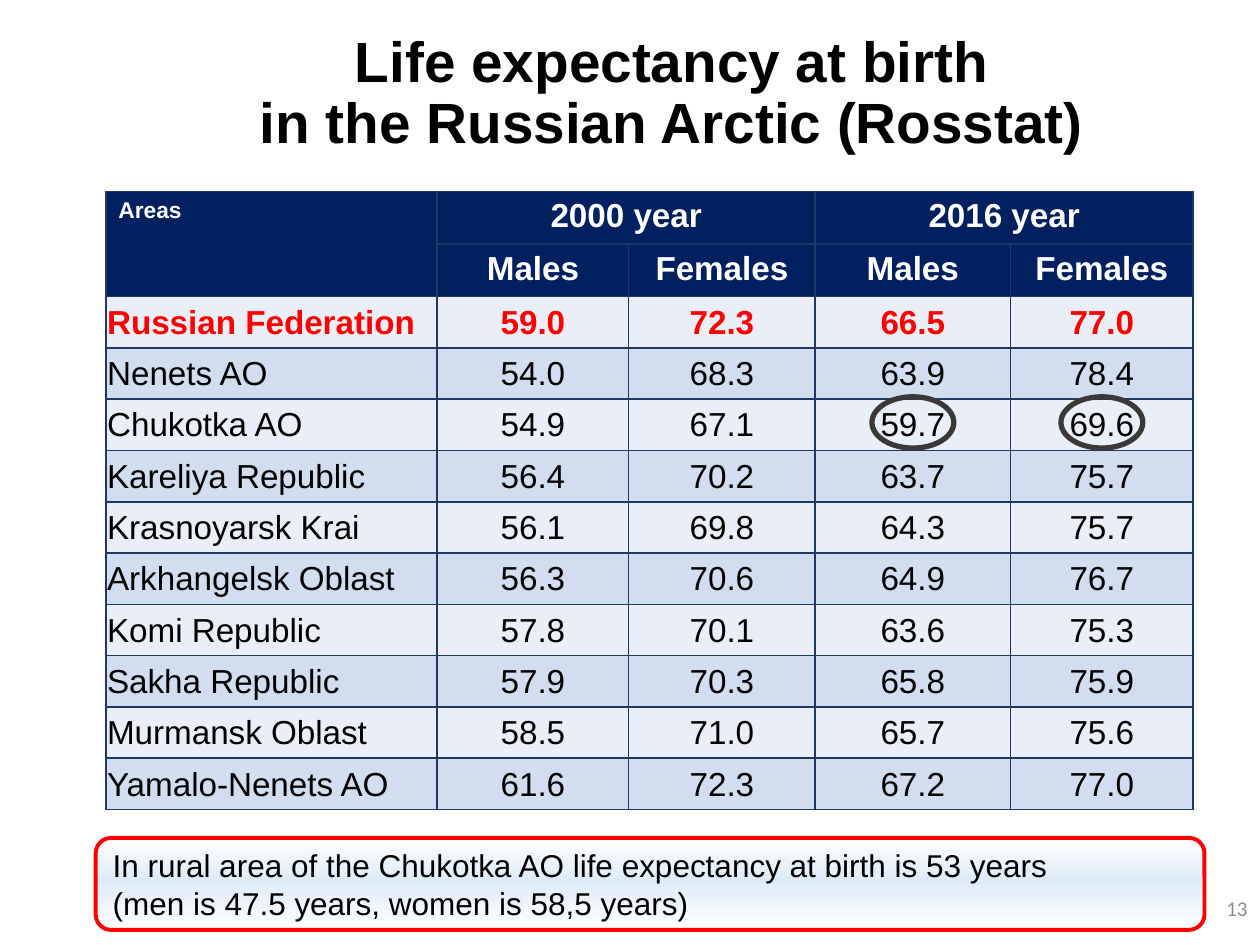
from copy import deepcopy

from lxml import etree
from pptx import Presentation
from pptx.dml.color import RGBColor
from pptx.enum.shapes import MSO_SHAPE
from pptx.enum.text import MSO_ANCHOR, MSO_AUTO_SIZE, PP_ALIGN
from pptx.oxml.ns import qn
from pptx.util import Inches, Pt

LEFT, CENTER, RIGHT = PP_ALIGN.LEFT, PP_ALIGN.CENTER, PP_ALIGN.RIGHT
TOP, MIDDLE = MSO_ANCHOR.TOP, MSO_ANCHOR.MIDDLE
NO_AUTOFIT = MSO_AUTO_SIZE.NONE
OVAL, ROUND_RECT = MSO_SHAPE.OVAL, MSO_SHAPE.ROUNDED_RECTANGLE

BLACK = RGBColor(0x00, 0x00, 0x00)
WHITE = RGBColor(0xFF, 0xFF, 0xFF)
RED = RGBColor(0xFF, 0x00, 0x00)
GRAY = RGBColor(0x8C, 0x8C, 0x8C)
CHARCOAL = RGBColor(0x3B, 0x38, 0x38)
NAVY = RGBColor(0x00, 0x20, 0x60)
BORDER = RGBColor(0x20, 0x38, 0x64)
BANDS = RGBColor(0xEA, 0xEF, 0xF7), RGBColor(0xD2, 0xDE, 0xEF)
PALE_BLUE = RGBColor(0xDE, 0xEB, 0xF7)

# Columns and rows are hundredths of the slide's width and height.
TABLE_LEFT, TABLE_TOP, ROW_HEIGHT = 8.4, 20.27, 5.43
COLUMNS = [26.3, 15.2, 14.8, 15.5, 14.5]
HEADER = [
    ["Areas", "2000 year", "", "2016 year", ""],
    ["", "Males", "Females", "Males", "Females"],
]
MERGES = [(0, 0, 1, 0), (0, 1, 0, 2), (0, 3, 0, 4)]
DATA = [
    ["Russian Federation", "59.0", "72.3", "66.5", "77.0"],
    ["Nenets AO", "54.0", "68.3", "63.9", "78.4"],
    ["Chukotka AO", "54.9", "67.1", "59.7", "69.6"],
    ["Kareliya Republic", "56.4", "70.2", "63.7", "75.7"],
    ["Krasnoyarsk Krai", "56.1", "69.8", "64.3", "75.7"],
    ["Arkhangelsk Oblast", "56.3", "70.6", "64.9", "76.7"],
    ["Komi Republic", "57.8", "70.1", "63.6", "75.3"],
    ["Sakha Republic", "57.9", "70.3", "65.8", "75.9"],
    ["Murmansk Oblast", "58.5", "71.0", "65.7", "75.6"],
    ["Yamalo-Nenets AO", "61.6", "72.3", "67.2", "77.0"],
]
CIRCLED = [(4, 3), (4, 4)]


class SlideBuilder:
    font = "Arial"

    def __init__(self, prs):
        self.col = prs.slide_width / 100
        self.row = prs.slide_height / 100
        self.slide = prs.slides.add_slide(prs.slide_layouts[5])

    def box(self, x, y, w, h):
        return (round(x * self.col), round(y * self.row),
                round(w * self.col), round(h * self.row))

    def set_text(self, tf, text, size, color=BLACK, bold=False, align=LEFT,
                 font=None):
        tf.text = text
        for p in tf.paragraphs:
            p.alignment = align
            p.font.name = font or self.font
            p.font.size = Pt(size)
            p.font.bold = bold
            p.font.color.rgb = color

    def title(self, text, *place):
        sp = self.slide.shapes.title
        sp.left, sp.top, sp.width, sp.height = self.box(*place)
        tf = sp.text_frame
        tf.auto_size, tf.vertical_anchor = NO_AUTOFIT, MIDDLE
        self.set_text(tf, text, 32.4, bold=True, align=CENTER)
        tf.paragraphs[0].line_spacing = 0.9

    def page_number(self, text, *place):
        tf = self.slide.shapes.add_textbox(*self.box(*place)).text_frame
        tf.word_wrap, tf.vertical_anchor = True, MIDDLE
        self.set_text(tf, text, 12, GRAY, align=RIGHT, font="Calibri")

    def outline(self, kind, color, width, *place):
        sp = self.slide.shapes.add_shape(kind, *self.box(*place))
        sp.shadow.inherit = False
        sp.fill.background()
        sp.line.color.rgb, sp.line.width = color, Pt(width)
        return sp

    def note(self, text, *place):
        sp = self.outline(ROUND_RECT, RED, 2.25, *place)
        sp.fill.gradient()
        sp.fill.gradient_angle = 270
        first = sp.fill.gradient_stops[0]._gs
        first.addnext(deepcopy(first))
        stops = zip(sp.fill.gradient_stops, (0, 0.46, 1),
                    (WHITE, PALE_BLUE, WHITE))
        for stop, position, color in stops:
            stop.position = position
            stop.color.rgb = color
        tf = sp.text_frame
        tf.word_wrap, tf.vertical_anchor = True, MIDDLE
        self.set_text(tf, text, 18)

    def cell_border(self, cell):
        tc_pr = cell._tc.get_or_add_tcPr()
        for side in ("lnL", "lnR", "lnT", "lnB"):
            ln = etree.SubElement(tc_pr, qn(f"a:{side}"), w=str(Pt(1)))
            fill = etree.SubElement(ln, qn("a:solidFill"))
            etree.SubElement(fill, qn("a:srgbClr"), val=str(BORDER))

    def cell(self, cell, text, r, c):
        self.cell_border(cell)
        is_header = r < len(HEADER)
        is_total = r == len(HEADER)
        cell.fill.solid()
        cell.fill.fore_color.rgb = NAVY if is_header else BANDS[r % 2]
        cell.vertical_anchor = TOP if is_header else MIDDLE
        if not is_header:
            cell.margin_left = cell.margin_right = Inches(0.01)
            cell.margin_top, cell.margin_bottom = Inches(0.01), 0
        color = WHITE if is_header else RED if is_total else BLACK
        self.set_text(cell.text_frame, text, 13 if r == c == 0 else 19, color,
                      is_header or is_total, CENTER if c else LEFT)

    def table(self, rows):
        place = self.box(TABLE_LEFT, TABLE_TOP, sum(COLUMNS),
                         ROW_HEIGHT * len(rows))
        table = self.slide.shapes.add_table(
            len(rows), len(COLUMNS), *place).table
        for column, width in zip(table.columns, COLUMNS):
            column.width = round(width * self.col)
        for r, values in enumerate(rows):
            table.rows[r].height = round(ROW_HEIGHT * self.row)
            for c, text in enumerate(values):
                self.cell(table.cell(r, c), text, r, c)
        for r1, c1, r2, c2 in MERGES:
            table.cell(r1, c1).merge(table.cell(r2, c2))

    def circle_cell(self, r, c, width=6.5):
        x = TABLE_LEFT + sum(COLUMNS[:c]) + (COLUMNS[c] - width) / 2
        y = TABLE_TOP + r * ROW_HEIGHT
        self.outline(OVAL, CHARCOAL, 3, x, y, width, ROW_HEIGHT)


def main():
    prs = Presentation()
    prs.slide_width, prs.slide_height = Inches(10), Inches(7.5)
    s = SlideBuilder(prs)
    s.title("Life expectancy at birth\vin the Russian Arctic (Rosstat)",
            6.9, 5, 92.8, 10)
    s.page_number("13", 77.5, 93.5, 22.5, 5.3)
    s.table(HEADER + DATA)
    for r, c in CIRCLED:
        s.circle_cell(r, c)
    s.note("In rural area of the Chukotka AO life expectancy at birth is "
           "53 years\n(men is 47.5 years, women is 58,5 years)",
           7.6, 88.67, 88, 9.73)
    prs.save("out.pptx")


if __name__ == "__main__":
    main()
